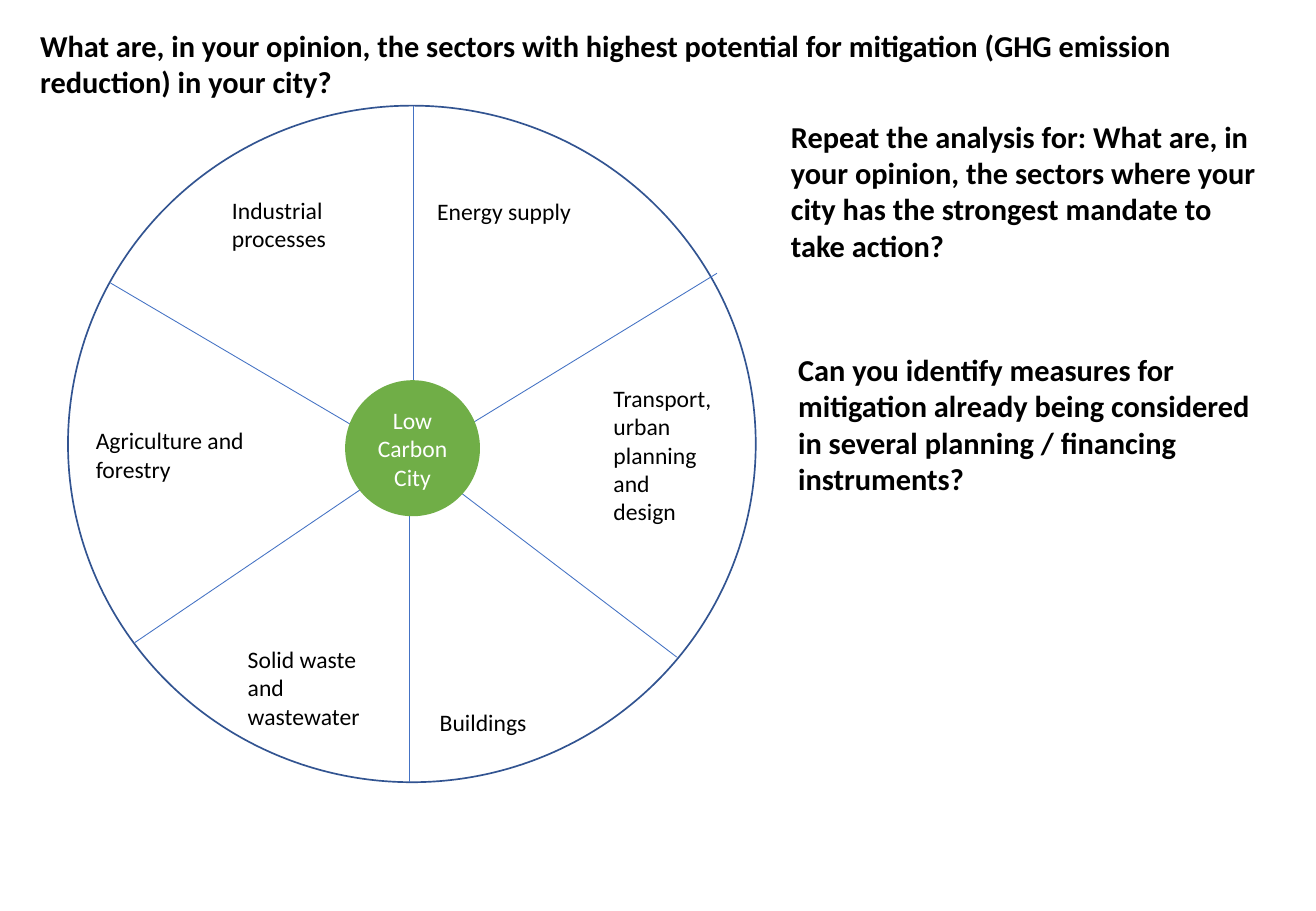
from lxml import etree
from pptx import Presentation
from pptx.dml.color import RGBColor
from pptx.enum.shapes import MSO_CONNECTOR, MSO_SHAPE
from pptx.enum.text import MSO_ANCHOR, MSO_AUTO_SIZE, PP_ALIGN
from pptx.oxml.ns import qn
from pptx.util import Inches, Pt

STRAIGHT = MSO_CONNECTOR.STRAIGHT
OVAL = MSO_SHAPE.OVAL
TOP, MIDDLE = MSO_ANCHOR.TOP, MSO_ANCHOR.MIDDLE
GROW = MSO_AUTO_SIZE.SHAPE_TO_FIT_TEXT
FIXED = MSO_AUTO_SIZE.NONE
LEFT, CENTER = PP_ALIGN.LEFT, PP_ALIGN.CENTER

HEAD = {"name": "Calibri", "size": Pt(18), "bold": True}
LABEL = {"name": "Calibri", "size": Pt(14), "bold": False}

TITLE = ("What are, in your opinion, the sectors with highest potential for "
         "mitigation (GHG emission reduction) in your city?")
ASKS = [
    ("Repeat the analysis for: What are, in your opinion, the sectors where "
     "your city has the strongest mandate to take action?",
     (6.41, 0.92, 4.11, 1.31)),
    ("Can you identify measures for mitigation already being considered in "
     "several planning / financing instruments?",
     (6.47, 2.84, 4.11, 1.31)),
]
SECTORS = [
    ("Energy supply", (3.5, 1.57, 1.36, 0.34), False),
    ("Transport, urban planning and design", (4.95, 3.11, 1.01, 1.28), True),
    ("Buildings", (3.52, 5.78, 0.93, 0.34), False),
    ("Solid waste and wastewater", (1.94, 5.26, 1.25, 0.81), True),
    ("Agriculture and forestry", (0.69, 3.46, 1.87, 0.57), True),
    ("Industrial processes", (1.81, 1.56, 1.12, 0.57), True),
]
SPOKES = [
    (3.4, 3.13, 3.4, 0.87),
    (3.45, 3.75, 5.9, 2.25),
    (3.39, 3.75, 5.57, 5.41),
    (3.37, 4.12, 3.37, 6.44),
    (3.38, 3.75, 1.11, 5.29),
    (3.32, 3.75, 0.91, 2.33),
]


def paint(color, value):
    color.rgb = RGBColor.from_string(value)


def place(box):
    return [Inches(n) for n in box]


def write(shape, text, style, hue="000000", align=LEFT, **frame):
    body = shape.text_frame
    body.text = text
    for key, value in frame.items():
        setattr(body, key, value)
    para = body.paragraphs[0]
    para.alignment = align
    para.line_spacing = 1.0
    para.space_before = Pt(0)
    font = para.runs[0].font
    for key, value in style.items():
        setattr(font, key, value)
    paint(font.color, hue)


def add_title(slide):
    title = slide.shapes.title
    spot = zip(("left", "top", "width", "height"),
               place((0.23, 0.17, 10.38, 0.71)))
    for key, value in spot:
        setattr(title, key, value)
    write(title, TITLE, HEAD, word_wrap=True, auto_size=FIXED,
          vertical_anchor=TOP)


def add_text(slide, text, box, style, wrap=True):
    shape = slide.shapes.add_textbox(*place(box))
    write(shape, text, style, word_wrap=wrap, auto_size=GROW)


def add_disc(slide, box, fill=None, line=None):
    disc = slide.shapes.add_shape(OVAL, *place(box))
    disc.shadow.inherit = False
    if fill:
        disc.fill.solid()
        paint(disc.fill.fore_color, fill)
    else:
        disc.fill.background()
    if line:
        paint(disc.line.color, line)
        disc.line.width = Pt(1)
    else:
        disc.line.fill.background()
    return disc


def add_spoke(slide, ends):
    spoke = slide.shapes.add_connector(STRAIGHT, *place(ends))
    paint(spoke.line.color, "4472C4")
    spoke.line.width = Pt(0.5)
    etree.SubElement(spoke._element.spPr, qn("a:effectLst"))


def main():
    deck = Presentation()
    deck.slide_width, deck.slide_height = Inches(10.83), Inches(7.5)
    slide = deck.slides.add_slide(deck.slide_layouts[5])
    add_title(slide)
    for text, box in ASKS:
        add_text(slide, text, box, HEAD)
    add_disc(slide, (0.56, 0.87, 5.66, 5.57), line="325491")
    for ends in SPOKES:
        add_spoke(slide, ends)
    for text, box, wrap in SECTORS:
        add_text(slide, text, box, LABEL, wrap)
    hub = add_disc(slide, (2.84, 3.13, 1.11, 1.12), fill="70AE47")
    write(hub, "Low Carbon City", LABEL, "FFFFFF", CENTER,
          word_wrap=True, vertical_anchor=MIDDLE)
    deck.save("out.pptx")


if __name__ == "__main__":
    main()
